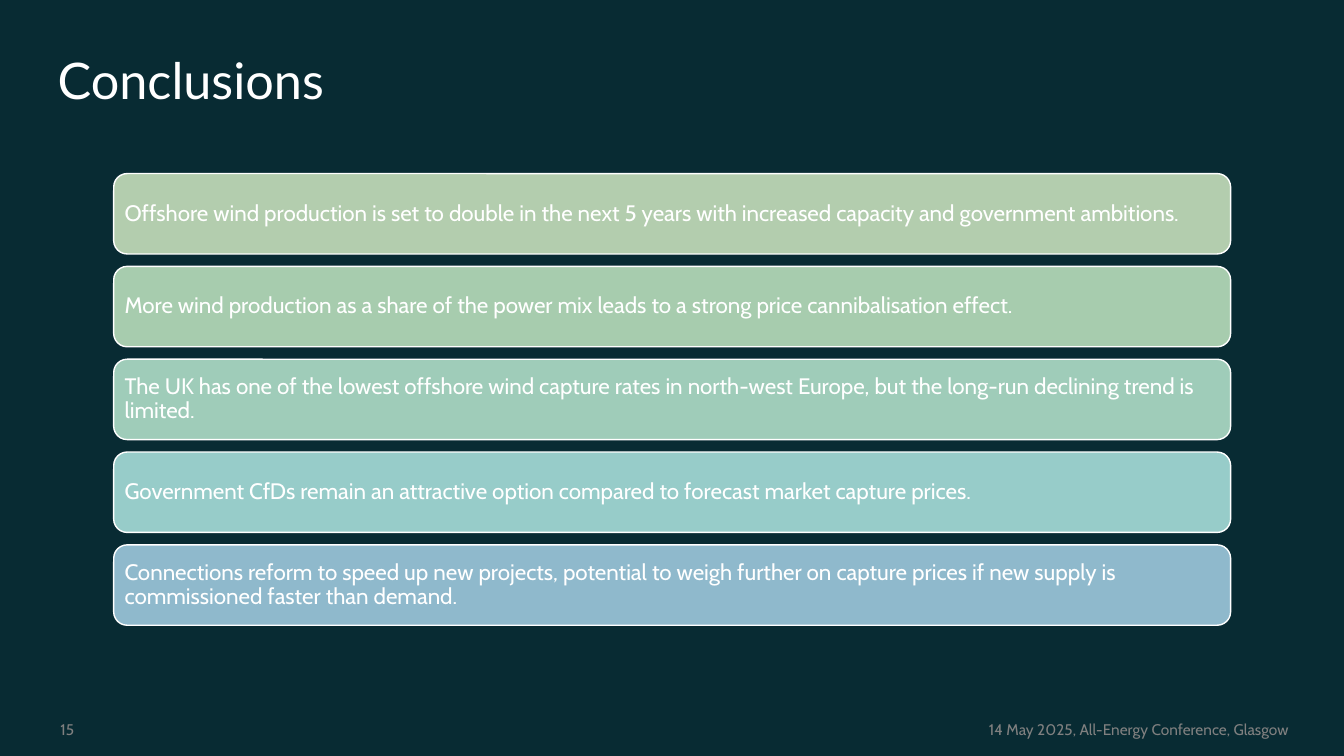
import pptx
import pptx.util
import pptx.dml.color
import pptx.enum.shapes
import pptx.enum.text
import pptx.oxml

Pt = pptx.util.Pt
RGB = pptx.dml.color.RGBColor.from_string
Align = pptx.enum.text.PP_ALIGN
Anchor = pptx.enum.text.MSO_ANCHOR

theme = {
    "back": "082B33", "text": "FFFFFF", "muted": "808080",
    "bars": ["B3CDAE", "A7CCAE", "9FCCB9", "97CCC9", "8FB9CC"],
    "head": "Lato", "body": "Cabin",
    "title": 36, "point": 16, "foot": 11,
}


def place(shape, left, top, width, height):
    shape.left, shape.top = Pt(left), Pt(top)
    shape.width, shape.height = Pt(width), Pt(height)


def write(shape, text, size, font, color, anchor, align=Align.LEFT, lines=1.0):
    frame = shape.text_frame
    frame.text = text
    frame.word_wrap = True
    frame.auto_size = pptx.enum.text.MSO_AUTO_SIZE.NONE
    frame.vertical_anchor = anchor
    para = frame.paragraphs[0]
    para.alignment = align
    para.line_spacing = lines
    para.space_before = Pt(0)
    run = para.runs[0]
    run.font.size = Pt(theme[size])
    run.font.name = theme[font]
    run.font.color.rgb = RGB(theme[color])


deck = pptx.Presentation()
deck.slide_width, deck.slide_height = Pt(960), Pt(540)
slide = deck.slides.add_slide(deck.slide_layouts[1])
slide.background.fill.solid()
slide.background.fill.fore_color.rgb = RGB(theme["back"])

title = slide.shapes.title
place(title, 34, 36.7, 830, 54)
write(title, "Conclusions", "title", "head", "text", Anchor.TOP, lines=0.9)

points = [
    "Offshore wind production is set to double in the next 5 years with increased capacity and government ambitions.",
    "More wind production as a share of the power mix leads to a strong price cannibalisation effect.",
    "The UK has one of the lowest offshore wind capture rates in north-west Europe, but the long-run declining trend is limited.",
    "Government CfDs remain an attractive option compared to forecast market capture prices.",
    "Connections reform to speed up new projects, potential to weigh further on capture prices if new supply is commissioned faster than demand.",
]
left, top, width, height, pitch = 81.2, 124, 797.8, 57.4, 66.3
for row, (point, color) in enumerate(zip(points, theme["bars"])):
    bar = slide.shapes.add_shape(
        pptx.enum.shapes.MSO_SHAPE.ROUNDED_RECTANGLE,
        Pt(left), Pt(top + row * pitch), Pt(width), Pt(height))
    bar.shadow.inherit = False
    bar.fill.solid()
    bar.fill.fore_color.rgb = RGB(color)
    bar.line.color.rgb = RGB(theme["text"])
    bar.line.width = Pt(1)
    write(bar, point, "point", "body", "text", Anchor.MIDDLE, lines=0.9)
    frame = bar.text_frame
    frame.margin_left = frame.margin_right = Pt(5)
    frame.margin_top = frame.margin_bottom = Pt(5)

number = slide.shapes.add_textbox(Pt(36), Pt(507), Pt(51), Pt(24))
write(number, "15", "foot", "body", "muted", Anchor.BOTTOM)

event = slide.placeholders[1]
place(event, 384.5, 507, 543.5, 24)
write(event, "14 May 2025, All-Energy Conference, Glasgow",
      "foot", "body", "muted", Anchor.BOTTOM, Align.RIGHT)
props = event.text_frame.paragraphs[0]._p.get_or_add_pPr()
props.set("marL", "0")
props.set("indent", "0")
props.append(pptx.oxml.parse_xml(
    '<a:buNone xmlns:a="http://schemas.openxmlformats.org/drawingml/2006/main"/>'))

deck.save("out.pptx")
